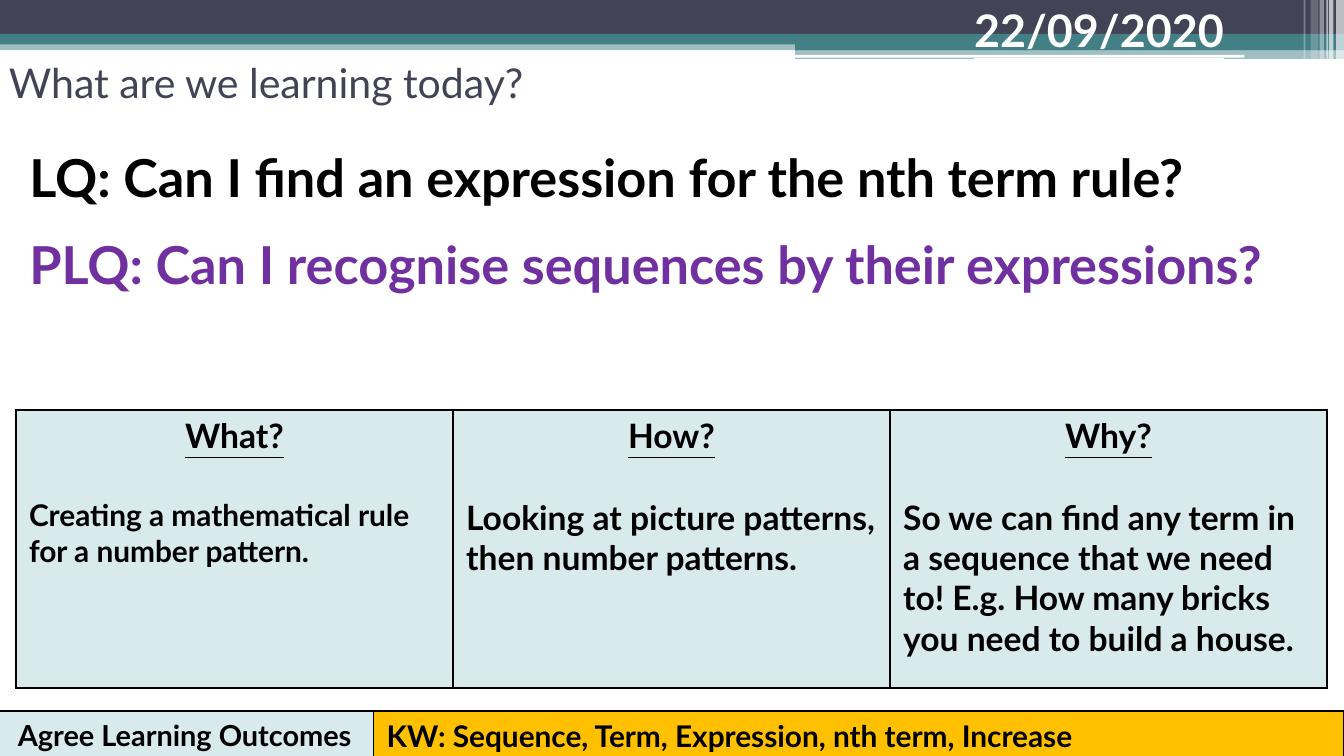
from lxml import etree
from pptx import Presentation
from pptx.dml.color import RGBColor
from pptx.enum import shapes, text
from pptx.oxml import ns
from pptx.util import Cm, Pt

NAVY, TEAL, PALE, WHITE, BLACK = "424456", "438086", "D8EAEC", "FFFFFF", "000000"
RECTANGLE = shapes.MSO_SHAPE.RECTANGLE


def add_bar(box, color, opacity=100, line=None, width=0.75, kind=RECTANGLE):
    shape = slide.shapes.add_shape(kind, *map(Cm, box))
    shape.shadow.inherit = False
    shape.fill.solid()
    shape.fill.fore_color.rgb = RGBColor.from_string(color)
    if opacity < 100:
        solid = shape.fill._xPr.find(ns.qn("a:solidFill"))
        etree.SubElement(solid[0], ns.qn("a:alpha"), val=str(opacity * 1000))
    if line:
        shape.line.color.rgb = RGBColor.from_string(line)
        shape.line.width = Pt(width)
    else:
        shape.line.fill.background()
    return shape


def write(paragraph, words, size, color=BLACK, bold=True, underline=False,
          align=text.PP_ALIGN.LEFT):
    paragraph.text = words
    paragraph.alignment = align
    font = paragraph.font
    font.name, font.size, font.bold, font.underline = "Lato", Pt(size), bold, underline
    font.color.rgb = RGBColor.from_string(color)


presentation = Presentation()
presentation.slide_width, presentation.slide_height = Cm(25.4), Cm(14.29)
slide = presentation.slides.add_slide(presentation.slide_layouts[5])

# Header bands
add_bar((0, 0.77, 25.4, 0.18), TEAL, 50)
add_bar((0, 0, 25.4, 0.64), NAVY)
add_bar((0, 0.64, 25.4, 0.2), TEAL)
add_bar((15.03, 0.77, 10.37, 0.18), TEAL)
add_bar((15.03, 0.92, 10.37, 0.38), TEAL, 50)
add_bar((15.01, 1.04, 8.51, 0.05), WHITE, kind=shapes.MSO_SHAPE.ROUNDED_RECTANGLE)

# Light vertical stripes at the right end: left, width, height, opacity
for left, width, height, opacity in (
    (25.25, 0.15, 1.3, 65), (25.12, 0.08, 1.3, 65), (25.07, 0.03, 1.3, 60),
    (24.94, 0.08, 1.3, 40), (24.77, 0.15, 1.22, 20), (24.64, 0.03, 1.22, 30),
):
    add_bar((left, 0, width, height), WHITE, opacity)

# Learning questions
title = slide.shapes.title
title.left, title.top, title.width, title.height = map(Cm, (0.3, 2.62, 24.41, 5.69))
frame = title.text_frame
frame.auto_size = text.MSO_AUTO_SIZE.NONE
frame.vertical_anchor = text.MSO_ANCHOR.TOP
write(frame.paragraphs[0], "LQ: Can I find an expression for the nth term rule?", 28)
personal_question = frame.add_paragraph()
write(personal_question, "PLQ: Can I recognise sequences by their expressions?", 28, "7030A0")
personal_question.space_before = Pt(13)

date = slide.shapes.add_textbox(*map(Cm, (18.16, -0.08, 7.49, 1.02)))
date.text_frame.word_wrap = True
write(date.text_frame.paragraphs[0], "22/09/2020", 24, WHITE, underline=True)

# Footer
for box, color, words, size, align in (
    ((-0.08, 13.44, 7.14, 0.92), PALE, "Agree Learning Outcomes", 15.5, text.PP_ALIGN.CENTER),
    ((7.06, 13.44, 18.34, 0.94), "FFC000",
     "KW: Sequence, Term, Expression, nth term, Increase", 16, text.PP_ALIGN.LEFT),
):
    footer = add_bar(box, color, line=BLACK)
    footer.text_frame.word_wrap = True
    write(footer.text_frame.paragraphs[0], words, size, align=align)

add_bar((14.91, 1.14, 10.49, 0.79), WHITE, line=WHITE, width=1.5)

# Learning outcomes
outcomes = (
    ("What?", "Creating a mathematical rule for a number pattern.", 16),
    ("How?", "Looking at picture patterns, then number patterns.", 18),
    ("Why?", "So we can find any term in a sequence that we need to! "
     "E.g. How many bricks you need to build a house.", 18),
)
table = slide.shapes.add_table(1, 3, *map(Cm, (0.3, 7.75, 24.78, 5.26))).table
for cell, (heading, answer, size) in zip(table.iter_cells(), outcomes):
    cell.fill.solid()
    cell.fill.fore_color.rgb = RGBColor.from_string(PALE)
    cell.margin_left = cell.margin_right = Cm(0.25)
    cell.margin_top = cell.margin_bottom = Cm(0.11)
    first = cell.text_frame.paragraphs[0]
    write(first, heading, 18, underline=True, align=text.PP_ALIGN.CENTER)
    first.space_after = Pt(22)
    write(cell.text_frame.add_paragraph(), answer, size)
    properties = cell._tc.get_or_add_tcPr()
    for index, side in enumerate("LRTB"):
        border = etree.Element(ns.qn(f"a:ln{side}"), w=str(Pt(1)))
        solid = etree.SubElement(border, ns.qn("a:solidFill"))
        etree.SubElement(solid, ns.qn("a:srgbClr"), val=BLACK)
        properties.insert(index, border)

topic = slide.shapes.add_textbox(*map(Cm, (-0.08, 0.43, 22.86, 2.24)))
topic.text_frame.word_wrap = True
topic.text_frame.vertical_anchor = text.MSO_ANCHOR.MIDDLE
write(topic.text_frame.paragraphs[0], "What are we learning today?", 22, NAVY, bold=False)

presentation.save("out.pptx")
